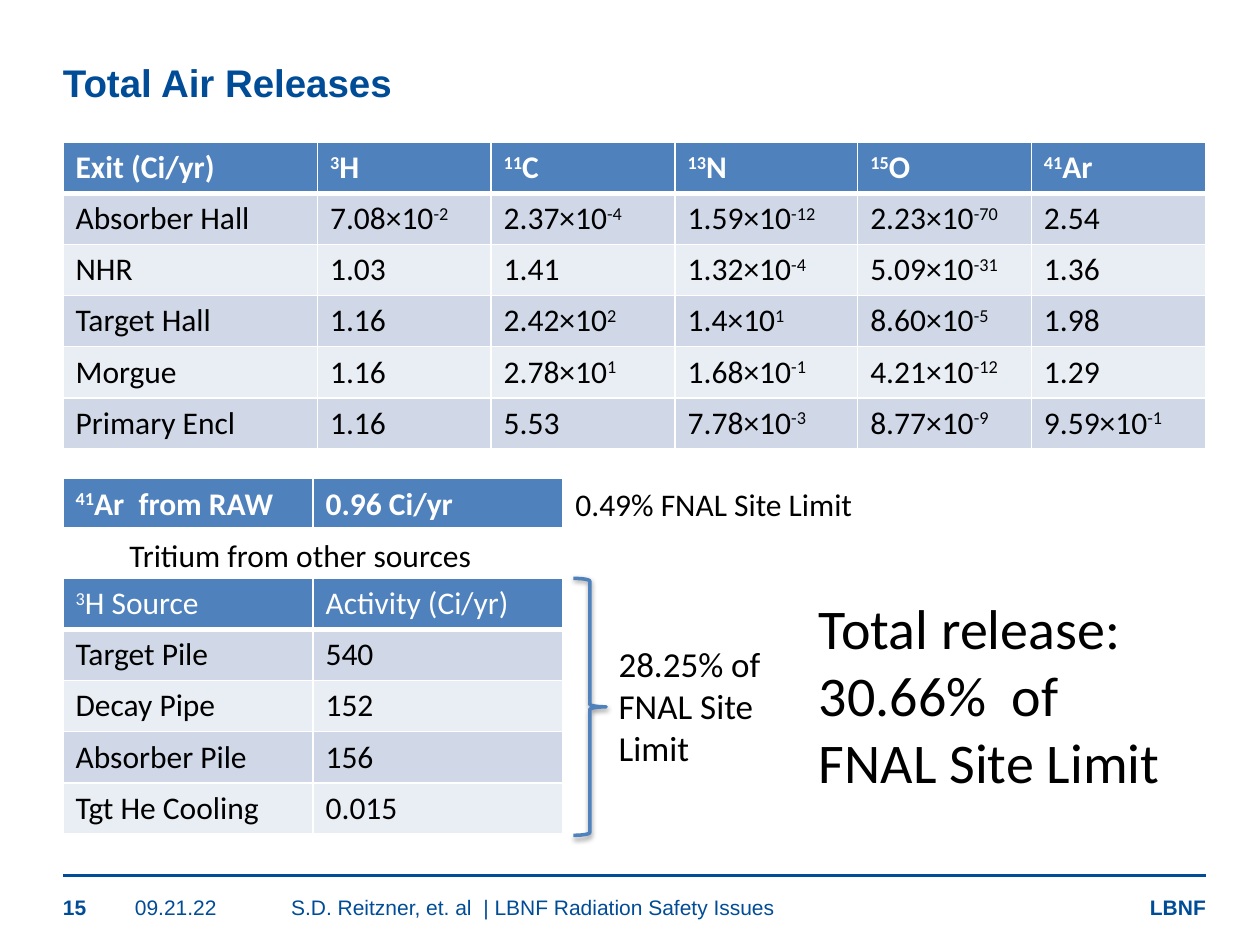
from dataclasses import dataclass

from lxml import etree
from pptx import Presentation
from pptx.dml.color import RGBColor
from pptx.enum.shapes import MSO_CONNECTOR, MSO_SHAPE
from pptx.enum.text import MSO_ANCHOR, PP_ALIGN
from pptx.oxml.ns import qn
from pptx.util import Cm, Pt

STRAIGHT = MSO_CONNECTOR.STRAIGHT
RIGHT_BRACE = MSO_SHAPE.RIGHT_BRACE
TOP, BOTTOM = MSO_ANCHOR.TOP, MSO_ANCHOR.BOTTOM
LEFT, RIGHT = PP_ALIGN.LEFT, PP_ALIGN.RIGHT


@dataclass(frozen=True)
class Theme:
    navy: str = "004C97"
    header: str = "4F81BD"
    odd_row: str = "D0D8E8"
    even_row: str = "E9EDF4"
    white: str = "FFFFFF"
    black: str = "000000"
    brand_font: str = "Arial"
    body_font: str = "Calibri"
    footer: int = 12
    body: int = 18
    note: int = 20
    title: int = 22
    total: int = 32


THEME = Theme()
MARGIN = 1.27
CONTENT_WIDTH = 23.04
ROW_HEIGHT = 1.03
FOOTER_TOP = 18.03
SOURCES_TOP = 11.66


def apply(target, values):
    for attribute, value in values.items():
        setattr(target, attribute, value)


def add_solid_fill(parent, color):
    fill = etree.SubElement(parent, qn("a:solidFill"))
    etree.SubElement(fill, qn("a:srgbClr"), val=color)


class SlideBuilder:
    def __init__(self, slide, theme):
        self.slide = slide
        self.theme = theme

    def add_runs(self, paragraph, text, size, color, font, bold):
        for index, part in enumerate(text.split("^")):
            if not part:
                continue
            run = paragraph.add_run()
            run.text = part
            apply(run.font, {"size": Pt(size), "name": font, "bold": bold})
            run.font.color.rgb = RGBColor.from_string(color)
            if index % 2:
                run.font._element.set("baseline", "30000")

    def text(self, box, lines, size, wrap=False):
        frame = self.slide.shapes.add_textbox(*map(Cm, box)).text_frame
        frame.word_wrap = wrap
        for index, line in enumerate(lines):
            paragraph = frame.add_paragraph() if index else frame.paragraphs[0]
            self.add_runs(paragraph, line, size, self.theme.black,
                          self.theme.body_font, False)

    def brand_text(self, box, text, size, bold=False, anchor=BOTTOM, align=LEFT):
        frame = self.slide.shapes.add_textbox(*map(Cm, box)).text_frame
        apply(frame, {"word_wrap": True, "vertical_anchor": anchor,
                      "margin_left": 0, "margin_right": 0,
                      "margin_top": 0, "margin_bottom": 0})
        frame.paragraphs[0].alignment = align
        self.add_runs(frame.paragraphs[0], text, size, self.theme.navy,
                      self.theme.brand_font, bold)

    def rule(self, left, top, width):
        line = self.slide.shapes.add_connector(
            STRAIGHT, Cm(left), Cm(top), Cm(left + width), Cm(top))
        line.line.color.rgb = RGBColor.from_string(self.theme.navy)
        line.line.width = Pt(2)
        etree.SubElement(line._element.spPr, qn("a:effectLst"))

    def brace(self, box):
        brace = self.slide.shapes.add_shape(RIGHT_BRACE, *map(Cm, box))
        brace.shadow.inherit = False
        brace.fill.background()
        brace.line.color.rgb = RGBColor.from_string(self.theme.header)
        brace.line.width = Pt(2)
        effects = brace._element.spPr.find(qn("a:effectLst"))
        shadow = etree.SubElement(
            effects, qn("a:outerShdw"), blurRad=str(Pt(3.1)),
            dist=str(Pt(1.6)), dir="5400000", rotWithShape="0")
        color = etree.SubElement(shadow, qn("a:srgbClr"), val=self.theme.black)
        etree.SubElement(color, qn("a:alpha"), val="38000")

    def borders(self, cell, row):
        widths = {"L": 1, "R": 1, "T": 3 if row == 1 else 1,
                  "B": 3 if row == 0 else 1}
        properties = cell._tc.get_or_add_tcPr()
        for position, (side, width) in enumerate(widths.items()):
            border = etree.Element(qn("a:ln" + side), w=str(Pt(width)))
            add_solid_fill(border, self.theme.white)
            properties.insert(position, border)

    def table(self, top, widths, rows, header_bold=True):
        theme = self.theme
        table = self.slide.shapes.add_table(
            len(rows), len(widths), Cm(MARGIN), Cm(top),
            Cm(sum(widths)), Cm(ROW_HEIGHT * len(rows))).table
        for column, width in zip(table.columns, widths):
            column.width = Cm(width)
        for index, values in enumerate(rows):
            table.rows[index].height = Cm(ROW_HEIGHT)
            is_header = index == 0
            band = theme.odd_row if index % 2 else theme.even_row
            for column, value in enumerate(values):
                cell = table.cell(index, column)
                cell.fill.solid()
                cell.fill.fore_color.rgb = RGBColor.from_string(
                    theme.header if is_header else band)
                self.borders(cell, index)
                self.add_runs(cell.text_frame.paragraphs[0], value, theme.body,
                              theme.white if is_header else theme.black,
                              theme.body_font, is_header and header_bold)


RELEASES = [
    ["Exit (Ci/yr)", "^3^H", "^11^C", "^13^N", "^15^O", "^41^Ar"],
    ["Absorber Hall", "7.08×10^-2", "2.37×10^-4", "1.59×10^-12",
     "2.23×10^-70", "2.54"],
    ["NHR", "1.03", "1.41", "1.32×10^-4", "5.09×10^-31", "1.36"],
    ["Target Hall", "1.16", "2.42×10^2", "1.4×10^1", "8.60×10^-5", "1.98"],
    ["Morgue", "1.16", "2.78×10^1", "1.68×10^-1", "4.21×10^-12", "1.29"],
    ["Primary Encl", "1.16", "5.53", "7.78×10^-3", "8.77×10^-9",
     "9.59×10^-1"],
]
RAW_RELEASE = [["^41^Ar  from RAW", "0.96 Ci/yr"]]
TRITIUM_SOURCES = [
    ["^3^H Source", "Activity (Ci/yr)"],
    ["Target Pile", "540"],
    ["Decay Pipe", "152"],
    ["Absorber Pile", "156"],
    ["Tgt He Cooling", "0.015"],
]


def main():
    deck = Presentation()
    deck.slide_width, deck.slide_height = Cm(25.4), Cm(19.05)
    builder = SlideBuilder(deck.slides.add_slide(deck.slide_layouts[6]), THEME)

    builder.brand_text((MARGIN, 1.19, CONTENT_WIDTH, 1.57), "Total Air Releases",
                       THEME.title, bold=True, anchor=TOP)
    builder.rule(MARGIN, 17.65, CONTENT_WIDTH)
    builder.brand_text((23.11, FOOTER_TOP, 1.2, 0.51), "LBNF", THEME.footer,
                       bold=True, align=RIGHT)
    for left, width, label, bold in (
            (MARGIN, 1.45, "15", True),
            (2.72, 3.15, "09.21.22", False),
            (5.87, 15.6, "S.D. Reitzner, et. al  | LBNF Radiation Safety Issues",
             False)):
        builder.brand_text((left, FOOTER_TOP, width, 0.51), label,
                           THEME.footer, bold)

    pair = [5.04, 5.04]
    builder.table(2.87, [5.13, 3.5, 3.71, 3.68, 3.5, 3.52], RELEASES)
    builder.table(9.65, pair, RAW_RELEASE)
    builder.table(SOURCES_TOP, pair, TRITIUM_SOURCES, header_bold=False)
    builder.brace((11.56, SOURCES_TOP, 0.66, 5.18))

    builder.text((11.35, 9.65, 6.15, 1.02), ["0.49% FNAL Site Limit"], THEME.body)
    builder.text((2.36, 10.69, 8.18, 1.02), ["Tritium from other sources"],
                 THEME.body, wrap=True)
    builder.text((12.22, 12.83, 3.56, 2.82),
                 ["28.25% of", "FNAL Site", "Limit"], THEME.note)
    builder.text((16.26, 11.84, 7.47, 4.37),
                 ["Total release:", "30.66%  of", "FNAL Site Limit"], THEME.total)

    deck.save("out.pptx")


if __name__ == "__main__":
    main()
